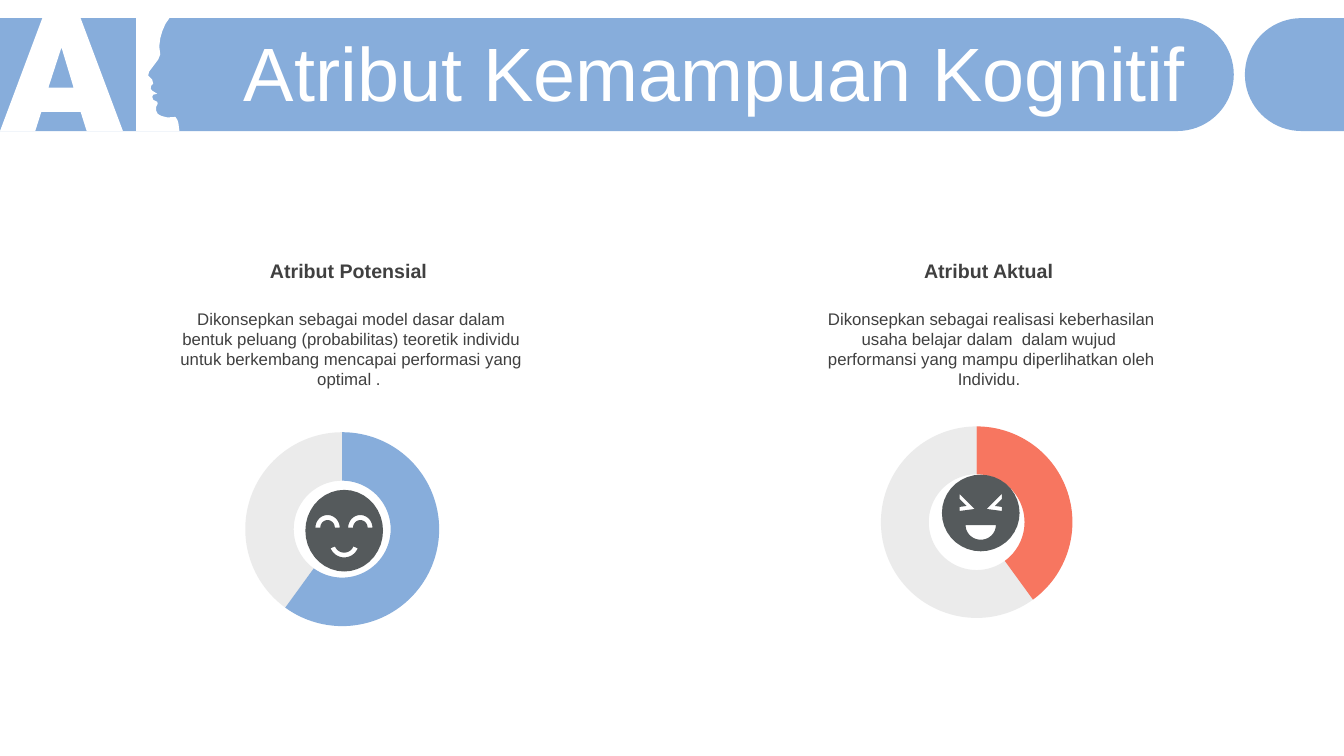
from math import cos, radians, sin

from lxml import etree
from pptx import Presentation
from pptx.chart.data import CategoryChartData
from pptx.dml.color import RGBColor
from pptx.enum.chart import XL_CHART_TYPE
from pptx.enum.text import MSO_ANCHOR, MSO_AUTO_SIZE, PP_ALIGN
from pptx.oxml.ns import qn
from pptx.util import Inches, Pt

DOUGHNUT = XL_CHART_TYPE.DOUGHNUT
TOP, MIDDLE = MSO_ANCHOR.TOP, MSO_ANCHOR.MIDDLE
LEFT, CENTER = PP_ALIGN.LEFT, PP_ALIGN.CENTER
NO_FIT = MSO_AUTO_SIZE.NONE

BLUE = RGBColor(0x87, 0xAD, 0xDB)
CORAL = RGBColor(0xF7, 0x76, 0x60)
GREY = RGBColor(0xBE, 0xBF, 0xBF)
SLATE = RGBColor(0x55, 0x5A, 0x5C)
INK = RGBColor(0x40, 0x40, 0x40)
BLACK = RGBColor(0, 0, 0)
WHITE = RGBColor(0xFF, 0xFF, 0xFF)

# All lengths are columns and rows of a square grid, ten to the inch
CELL = Inches(0.1)
COLUMNS, ROWS = 133.33, 75
BAND_TOP, BAND_BOTTOM = 1.8, 13
BAND_MIDDLE = (BAND_TOP + BAND_BOTTOM) / 2
BAND_RADIUS = (BAND_BOTTOM - BAND_TOP) / 2


def grid(*lengths):
    return [round(length * CELL) for length in lengths]


def arc(x, y, radius_x, radius_y, start, end, steps=36):
    """Points along an ellipse, with angles clockwise from the right."""
    angles = [radians(start + (end - start) * i / steps) for i in range(steps + 1)]
    return [(x + radius_x * cos(a), y + radius_y * sin(a)) for a in angles]


def curve(x, y, outer, inner, start, end):
    """A curved stroke between two concentric arcs."""
    return arc(x, y, *outer, start, end) + arc(x, y, *inner, end, start)


class Slide:
    font = "Arial"

    def __init__(self, deck):
        self.page = deck.slides.add_slide(deck.slide_layouts[5])
        self.shapes = self.page.shapes

    def outline(self, contours, color):
        builder = None
        for contour in contours:
            points = [grid(*point) for point in contour]
            if builder is None:
                builder = self.shapes.build_freeform(*points[0], scale=1.0)
            else:
                builder.move_to(*points[0])
            builder.add_line_segments(points[1:], close=True)
        shape = builder.convert_to_shape()
        shape.shadow.inherit = False
        shape.fill.solid()
        shape.fill.fore_color.rgb = color
        shape.line.fill.background()

    def set_text(self, box, text, size, color, align, anchor, bold=False):
        frame = box.text_frame
        frame.word_wrap = True
        frame.auto_size = NO_FIT
        frame.vertical_anchor = anchor
        para = frame.paragraphs[0]
        para.alignment = align
        span = para.add_run()
        span.text = text
        span.font.name = self.font
        span.font.size = Pt(size)
        span.font.bold = bold
        span.font.color.rgb = color
        return para

    def title(self, place, text):
        box = self.shapes.title
        box.left, box.top, box.width, box.height = grid(*place)
        para = self.set_text(box, text, 54, WHITE, LEFT, MIDDLE)
        para.line_spacing = 0.9
        para.space_before = Pt(10)
        # Bring the title in front of the band
        box._element.getparent().append(box._element)

    def text(self, place, text, size, anchor, bold=False):
        box = self.shapes.add_textbox(*grid(*place))
        self.set_text(box, text, size, INK, CENTER, anchor, bold)

    def doughnut(self, place, values, color, plot=None):
        data = CategoryChartData()
        data.categories = ["1", "2"]
        data.add_series("Series 1", values)
        chart = self.shapes.add_chart(DOUGHNUT, *grid(*place), data).chart
        chart.has_legend = False
        chart.has_title = False
        chart.font.name = self.font
        chart.font.size = Pt(18)
        chart.font.color.rgb = BLACK
        series = chart.plots[0].series[0]
        for index, shade in enumerate((color, GREY)):
            look = series.points[index].format
            look.fill.solid()
            look.fill.fore_color.rgb = shade
            look.line.fill.background()
        # Pale remainder and wide hole
        for tint in series._element.xpath(f'.//a:srgbClr[@val="{GREY}"]'):
            etree.SubElement(tint, qn("a:alpha"), val="30000")
        chart._chartSpace.xpath(".//c:holeSize")[0].set("val", "75")
        if plot:
            self.place_plot(chart, plot)

    def place_plot(self, chart, plot):
        area = chart._chartSpace.xpath(".//c:plotArea")[0]
        for old in area.findall(qn("c:layout")):
            area.remove(old)
        layout = etree.Element(qn("c:layout"))
        manual = etree.SubElement(layout, qn("c:manualLayout"))
        settings = [("layoutTarget", "inner"), ("xMode", "edge"), ("yMode", "edge")]
        settings += zip("xywh", plot)
        for name, value in settings:
            etree.SubElement(manual, qn(f"c:{name}"), val=str(value))
        area.insert(0, layout)


def draw_header(slide):
    # Blue band and its continuation at the right edge
    slide.outline([[(0, BAND_TOP)]
                   + arc(116.8, BAND_MIDDLE, BAND_RADIUS, BAND_RADIUS, -90, 90)
                   + [(0, BAND_BOTTOM)]], BLUE)
    slide.outline([[(COLUMNS, BAND_TOP)]
                   + arc(129.1, BAND_MIDDLE, BAND_RADIUS, BAND_RADIUS, 270, 90)
                   + [(COLUMNS, BAND_BOTTOM)]], BLUE)

    # Letter A beside a head in profile
    letter = [(4.2, BAND_TOP), (8, BAND_TOP), (12.2, BAND_BOTTOM), (8.6, BAND_BOTTOM),
              (8, 11.1), (4.1, 11.1), (3.5, BAND_BOTTOM), (0, BAND_BOTTOM)]
    counter = [(6.1, 4.7), (4.8, 8.7), (7.3, 8.7)]
    profile = [(13.5, BAND_TOP), (16.8, BAND_TOP), (16.4, 2.4), (16.1, 3.1),
               (15.9, 3.8), (15.8, 4.6), (15.9, 5.4), (15.7, 5.9), (15.1, 6.7),
               (14.8, 7.1), (14.7, 7.5), (15.1, 7.9), (15.2, 8.3), (15, 8.5),
               (14.95, 8.8), (15.1, 9), (15.6, 9.3), (15.2, 9.4), (15.1, 9.6),
               (15.2, 9.9), (15.6, 10.1), (15.65, 10.3), (15.5, 10.6), (15.5, 11),
               (15.65, 11.3), (16, 11.5), (16.6, 11.65), (17.4, 11.6), (17.6, 11.9),
               (17.7, 12.2), (17.8, BAND_BOTTOM), (13.5, BAND_BOTTOM)]
    slide.outline([letter, counter, profile], WHITE)
    slide.title((23.2, 3.7, 106.9, 7.9), "Atribut Kemampuan Kognitif")


def draw_faces(slide):
    # Smiling face
    eyes = [curve(x, 52.35, (1.2, 1.25), (0.72, 0.75), 180, 360) for x in (32.5, 35.75)]
    smile = curve(34.15, 53.85, (1.45, 1.45), (0.98, 0.98), 22, 158)
    slide.outline([arc(34.15, 52.65, 3.85, 4.05, 0, 360), *eyes, smile], SLATE)

    # Laughing face, its right eye mirroring the left
    middle = 97.3
    left_eye = [(95.2, 49), (95.2, 49.5), (95.9, 50.2),
                (95.2, 50.3), (95.2, 50.7), (96.7, 50.5)]
    right_eye = [(2 * middle - x, y) for x, y in left_eye]
    mouth = arc(middle, 52.1, 1.5, 1.45, 0, 180)
    slide.outline([arc(middle, 50.9, 3.85, 3.8, 0, 360), left_eye, right_eye, mouth], SLATE)


def main():
    deck = Presentation()
    deck.slide_width, deck.slide_height = grid(COLUMNS, ROWS)
    slide = Slide(deck)
    draw_header(slide)

    # Two attributes: heading, description and share
    attributes = [
        (16.8, "Atribut Potensial ",
         "Dikonsepkan sebagai model dasar dalam bentuk peluang (probabilitas) "
         "teoretik individu untuk berkembang mencapai performasi yang optimal . ",
         (22.5, 41.5, 22.9, 22), (60, 40), BLUE, None),
        (80.3, "Atribut Aktual ",
         "Dikonsepkan sebagai realisasi keberhasilan usaha belajar dalam  dalam wujud  "
         "performansi yang mampu diperlihatkan oleh Individu. ",
         (85.1, 40.3, 22.9, 23.5), (40, 60), CORAL, (0.1, 0.06, 0.83, 0.86)),
    ]
    for left, heading, description, place, values, color, plot in attributes:
        slide.doughnut(place, values, color, plot)
        slide.text((left, 30.1, 36.1, 9.2), description, 12, TOP)
        slide.text((left, 25.2, 36.1, 3.4), heading, 14, MIDDLE, bold=True)

    draw_faces(slide)
    deck.save("out.pptx")


if __name__ == "__main__":
    main()
